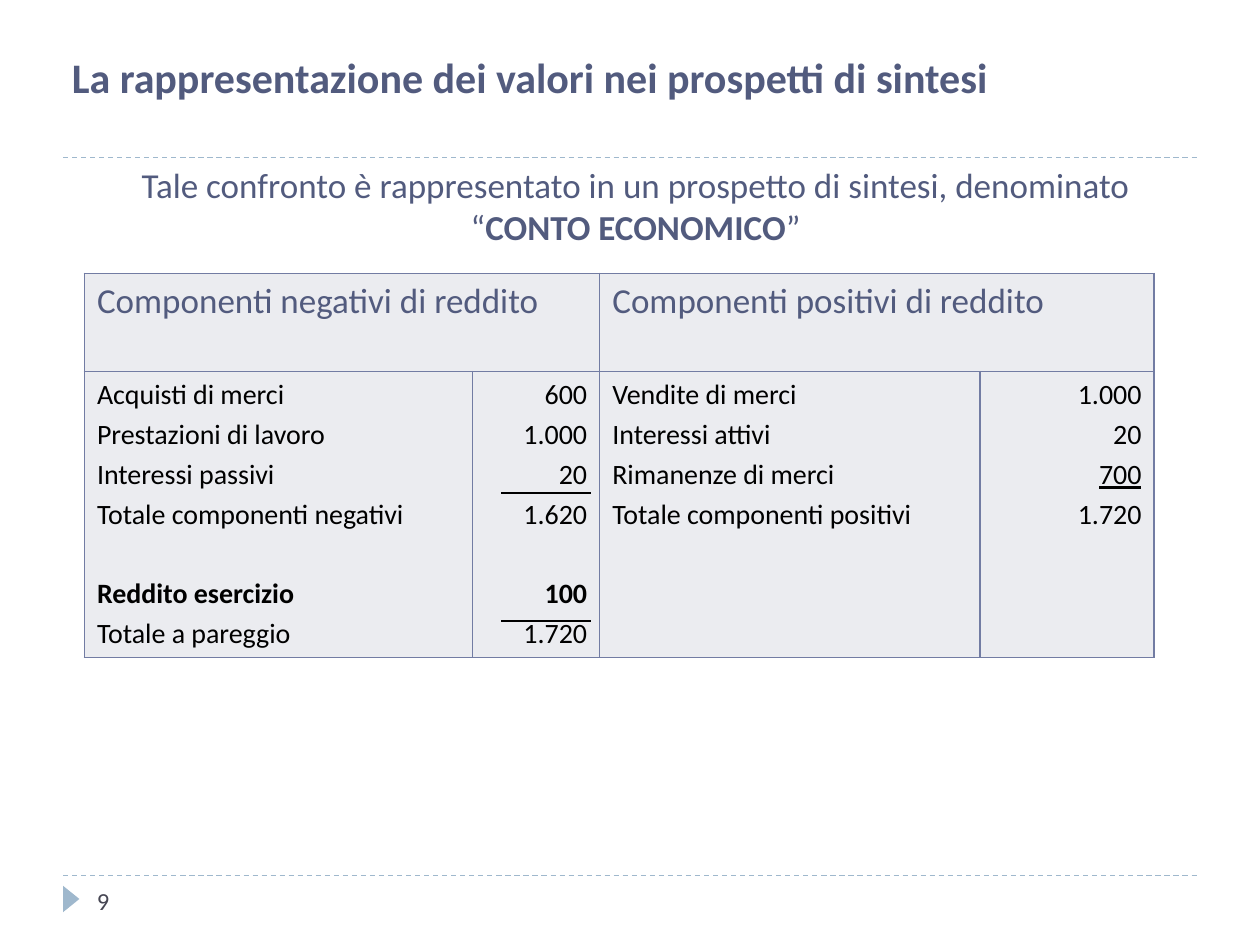
import pptx
import pptx.dml.color
import pptx.enum.dml
import pptx.enum.shapes
import pptx.enum.text
import pptx.oxml.ns
import pptx.util
from lxml import etree
from pptx.util import Inches

FONT = "Calibri"
HEADING = "525B7E"
ACCENT = "9FB8CD"
BORDER = "727CA3"
CELL_FILL = "EBECF0"
BLACK = "000000"
LEFT = pptx.enum.text.PP_ALIGN.LEFT
CENTER = pptx.enum.text.PP_ALIGN.CENTER
RIGHT = pptx.enum.text.PP_ALIGN.RIGHT
TOP = pptx.enum.text.MSO_ANCHOR.TOP
MIDDLE = pptx.enum.text.MSO_ANCHOR.MIDDLE

NEGATIVE = [
    ("Acquisti di merci", "600", {}),
    ("Prestazioni di lavoro", "1.000", {}),
    ("Interessi passivi", "20", {}),
    ("Totale componenti negativi", "1.620", {}),
    ("Reddito esercizio", "100", {"bold": True, "before": 26}),
    ("Totale a pareggio", "1.720", {}),
]
POSITIVE = [
    ("Vendite di merci", "1.000", {}),
    ("Interessi attivi", "20", {}),
    ("Rimanenze di merci", "700", {"underline": True}),
    ("Totale componenti positivi", "1.720", {}),
]


def color(value):
    """Return the colour for a hex string."""
    return pptx.dml.color.RGBColor.from_string(value)


def write(paragraph, text, size=16, fill=BLACK, bold=False, underline=False,
          align=LEFT, before=0):
    """Append a formatted run to a paragraph."""
    paragraph.alignment = align
    paragraph.space_before = pptx.util.Pt(before)
    run = paragraph.add_run()
    run.text = text
    run.font.name = FONT
    run.font.size = pptx.util.Pt(size)
    run.font.bold = bold
    run.font.underline = underline
    run.font.color.rgb = color(fill)


def set_frame(shape, anchor=TOP):
    """Make a shape's text wrap at a fixed size and return its frame."""
    frame = shape.text_frame
    frame.word_wrap = True
    frame.auto_size = pptx.enum.text.MSO_AUTO_SIZE.NONE
    frame.vertical_anchor = anchor
    return frame


def add_line(slide, left, top, width, fill, points, dashed=False):
    """Draw a horizontal line."""
    line = slide.shapes.add_connector(
        pptx.enum.shapes.MSO_CONNECTOR.STRAIGHT,
        Inches(left), Inches(top), Inches(left + width), Inches(top))
    line.line.color.rgb = color(fill)
    line.line.width = pptx.util.Pt(points)
    if dashed:
        line.line.dash_style = pptx.enum.dml.MSO_LINE.DASH
    etree.SubElement(line._element.spPr, pptx.oxml.ns.qn("a:effectLst"))


def add_title(slide, left, top, width, height):
    """Place the title and the dashed rule below it."""
    title = slide.shapes.title
    title.left, title.top = Inches(left), Inches(top)
    title.width, title.height = Inches(width), Inches(height)
    write(set_frame(title).paragraphs[0],
          "La rappresentazione dei valori nei prospetti di sintesi",
          size=24, fill=HEADING, bold=True)
    add_line(slide, 0.5, top + 0.89, 9, ACCENT, 0.75, dashed=True)


def add_introduction(slide, left, top, width, height):
    """Place the centred sentence above the table."""
    box = slide.shapes.add_textbox(
        Inches(left), Inches(top), Inches(width), Inches(height))
    paragraph = set_frame(box).paragraphs[0]
    parts = [
        ("Tale confronto è rappresentato in un prospetto di sintesi, denominato “", False),
        ("CONTO ECONOMICO", True),
        ("”", False),
    ]
    for text, bold in parts:
        write(paragraph, text, size=20, fill=HEADING, bold=bold, align=CENTER)


def format_cell(cell):
    """Fill a cell and draw its four borders."""
    properties = cell._tc.get_or_add_tcPr()
    for side in ("a:lnL", "a:lnR", "a:lnT", "a:lnB"):
        line = etree.SubElement(properties, pptx.oxml.ns.qn(side), w="12700")
        solid = etree.SubElement(line, pptx.oxml.ns.qn("a:solidFill"))
        etree.SubElement(solid, pptx.oxml.ns.qn("a:srgbClr"), val=BORDER)
    cell.fill.solid()
    cell.fill.fore_color.rgb = color(CELL_FILL)


def write_entries(cell, entries, align):
    """Write one paragraph for each text and format pair."""
    for index, (text, style) in enumerate(entries):
        frame = cell.text_frame
        paragraph = frame.add_paragraph() if index else frame.paragraphs[0]
        write(paragraph, text, align=align, **{"before": 3.2, **style})


def add_income_statement(slide, left, top, width, height):
    """Place the two-sided income statement with its subtotal rules."""
    header_height = 0.78
    table = slide.shapes.add_table(
        2, 4, Inches(left), Inches(top), Inches(width), Inches(height)).table
    table.first_row = False
    table.horz_banding = False
    for column, column_width in zip(table.columns, (3.08, 1.01, 3.02, 1.38)):
        column.width = Inches(column_width)
    table.rows[0].height = Inches(header_height)
    table.rows[1].height = Inches(height - header_height)
    for cell in table.iter_cells():
        format_cell(cell)

    sides = [("Componenti negativi di reddito", NEGATIVE),
             ("Componenti positivi di reddito", POSITIVE)]
    for side, (heading, entries) in enumerate(sides):
        first = 2 * side
        header = table.cell(0, first)
        header.merge(table.cell(0, first + 1))
        write(header.text_frame.paragraphs[0], heading,
              size=20, fill=HEADING, before=4)
        labels = [(label, {**style, "underline": False})
                  for label, _, style in entries]
        amounts = [(amount, style) for _, amount, style in entries]
        write_entries(table.cell(1, first), labels, LEFT)
        write_entries(table.cell(1, first + 1), amounts, RIGHT)

    for offset in (1.74, 2.76):
        add_line(slide, left + 3.31, top + offset, 0.71, BLACK, 1)


def add_footer(slide, left, top, width, height):
    """Place the dashed rule, the pointer and the page number."""
    add_line(slide, 0.5, top, 9, ACCENT, 0.75, dashed=True)
    pointer = slide.shapes.add_shape(
        pptx.enum.shapes.MSO_SHAPE.ISOSCELES_TRIANGLE,
        Inches(left - 0.21), Inches(top + 0.12), Inches(0.21), Inches(0.13))
    pointer.rotation = 90
    pointer.shadow.inherit = False
    pointer.fill.solid()
    pointer.fill.fore_color.rgb = color(ACCENT)
    pointer.line.fill.background()
    number = slide.shapes.add_textbox(
        Inches(left), Inches(top), Inches(width), Inches(height))
    write(set_frame(number, MIDDLE).paragraphs[0], "9", size=14, fill="464653")


def main():
    """Build and save the presentation."""
    presentation = pptx.Presentation()
    presentation.slide_width = Inches(10)
    presentation.slide_height = Inches(7.5)
    slide = presentation.slides.add_slide(presentation.slide_layouts[5])
    add_title(slide, 0.47, 0.36, 9.88, 0.5)
    add_introduction(slide, 0.83, 1.25, 8.43, 0.77)
    add_income_statement(slide, 0.67, 2.17, 8.49, 3)
    add_footer(slide, 0.67, 6.95, 2.17, 0.4)
    presentation.save("out.pptx")


if __name__ == "__main__":
    main()
